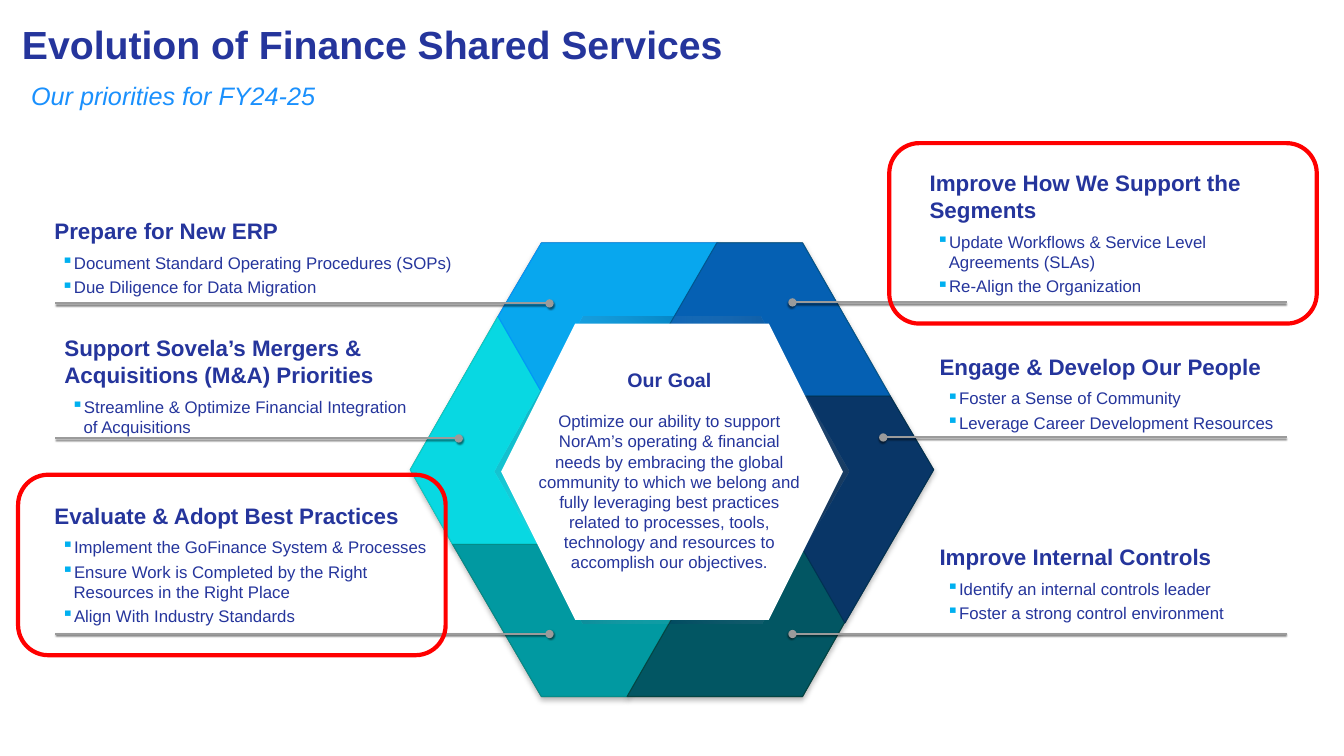
import pptx
import pptx.util
import pptx.dml.color
import pptx.enum.shapes
import pptx.enum.text
import pptx.oxml.ns
import pptx.oxml.xmlchemy
from dataclasses import dataclass

Inches = pptx.util.Inches
Pt = pptx.util.Pt
RGB = pptx.dml.color.RGBColor.from_string
SHAPE = pptx.enum.shapes.MSO_SHAPE
ANCHOR = pptx.enum.text.MSO_ANCHOR
ALIGN = pptx.enum.text.PP_ALIGN
qn = pptx.oxml.ns.qn


@dataclass(frozen=True)
class Theme:
    """Colours, font and type sizes of the slide."""
    font: str = "Arial"
    text: str = "25359C"
    subtitle: str = "1A90FD"
    bullet: str = "00B0F0"
    leader: str = "9B9B9B"
    frame: str = "FF0000"
    white: str = "FFFFFF"
    base: str = "777777"
    base_line: str = "606060"
    title_size: int = 28
    subtitle_size: int = 18
    heading_size: int = 16
    goal_size: int = 14
    body_size: int = 12


THEME = Theme()

SEGMENTS = [
    ("08D8E2", "06CEC9",
     [(5.36, 3.87), (4.94, 3.14), (4.07, 4.66), (4.49, 5.4), (6.24, 5.4)],
     [(5.36, 3.87), (4.91, 4.67), (5.33, 5.4), (6.25, 5.4)], "01315D", 28, 45),
    ("0199A1", "048C89",
     [(7.09, 5.4), (4.49, 5.4), (5.37, 6.91), (6.22, 6.91), (6.63, 6.19)],
     [(5.33, 5.4), (5.78, 6.19), (6.63, 6.19), (7.09, 5.4)], "01315D", 28, 0),
    ("08A7EE", "0195F9",
     [(5.37, 2.41), (4.94, 3.14), (5.36, 3.87), (5.82, 4.66), (6.24, 3.93), (7.12, 2.41)],
     [(5.82, 4.67), (6.24, 3.93), (6.7, 3.14), (5.78, 3.14), (5.36, 3.88)], "01315D", 28, 135),
    ("025663", "034543",
     [(7.97, 5.46), (7.51, 4.67), (7.09, 5.4), (6.22, 6.91), (7.96, 6.91), (8.38, 6.17)],
     [(7.09, 5.4), (6.63, 6.19), (7.55, 6.19), (7.97, 5.46), (7.51, 4.67)], "01315D", 28, 315),
    ("0560B3", "01568F",
     [(7.96, 2.41), (7.11, 2.41), (6.23, 3.93), (8.83, 3.93)],
     [(6.24, 3.93), (7.99, 3.93), (7.54, 3.14), (6.69, 3.14)], "01315D", 28, 180),
    ("093667", "013253",
     [(8.83, 3.93), (7.09, 3.93), (8.38, 6.18), (9.26, 4.66)],
     [(7.96, 5.45), (8.42, 4.67), (7.99, 3.92), (7.08, 3.92)], "000C16", 35, 225),
]

LEADERS = [
    (5.45, 0.55, 3.01), (4.55, 0.55, 4.35), (5.45, 0.55, 6.29),
    (7.86, 12.76, 3.0), (8.76, 12.76, 4.34), (7.86, 12.76, 6.29),
]

PRIORITIES = [
    ((9.22, 1.67, 3.5, 1.27), True, "Improve How We Support the Segments",
     ["Update Workflows & Service Level Agreements (SLAs)", "Re-Align the Organization"]),
    ((0.54, 4.96, 3.72, 1.25), True, "Evaluate & Adopt Best Practices",
     ["Implement the GoFinance System & Processes",
      "Ensure Work is Completed by the Right Resources in the Right Place",
      "Align With Industry Standards"]),
    ((0.54, 2.15, 4.24, 0.8), True, "Prepare for New ERP",
     ["Document Standard Operating Procedures (SOPs)", "Due Diligence for Data Migration"]),
    ((9.22, 5.34, 3.82, 0.9), False, "Improve Internal Controls",
     ["Identify an internal controls leader", "Foster a strong control environment"]),
    ((9.22, 3.45, 3.84, 0.9), False, "Engage & Develop Our People",
     ["Foster a Sense of Community", "Leverage Career Development Resources"]),
    ((0.54, 3.27, 3.72, 1.13), False, "Support Sovela’s Mergers & Acquisitions (M&A) Priorities",
     ["Streamline & Optimize Financial Integration of Acquisitions"]),
]

GOAL = ("Optimize our ability to support NorAm’s operating & financial needs by embracing "
        "the global community to which we belong and fully leveraging best practices related "
        "to processes, tools, technology and resources to accomplish our objectives.")


def add_xml(parent, tag, **attrs):
    """Append a drawing element and return it."""
    el = pptx.oxml.xmlchemy.OxmlElement(tag)
    for name, value in attrs.items():
        el.set(name, str(value))
    parent.append(el)
    return el


def add_shadow(effects, blur, dist, alpha):
    """Put a black shadow that falls downwards into an effect list."""
    outer = add_xml(effects, "a:outerShdw", blurRad=int(Pt(blur)), dist=int(Pt(dist)),
                    dir=5400000, algn="t", rotWithShape=0)
    add_xml(add_xml(outer, "a:srgbClr", val="000000"), "a:alpha", val=alpha * 1000)


def paint(sp, fill, line, width):
    """Set a plain fill and line, either of which may be None."""
    sp.shadow.inherit = False
    if fill:
        sp.fill.solid()
        sp.fill.fore_color.rgb = RGB(fill)
    else:
        sp.fill.background()
    if line:
        sp.line.color.rgb = RGB(line)
        sp.line.width = Pt(width)
    else:
        sp.line.fill.background()


def add_polygon(s, points, fill=None, line=None):
    """Add a closed outline through points given in inches."""
    start, *rest = [(Inches(x), Inches(y)) for x, y in points]
    builder = s.shapes.build_freeform(*start)
    builder.add_line_segments(rest, close=True)
    sp = builder.convert_to_shape()
    paint(sp, fill, line, 0.75)
    return sp


def add_shade(s, points, color, alpha, angle):
    """Add an inner face that fades from a dark tint to clear."""
    sp = add_polygon(s, points)
    sp.fill.gradient()
    sp.fill.gradient_angle = -angle % 360
    stops = sp.fill.gradient_stops
    for stop, rgb in zip(stops, (color, THEME.white)):
        stop.color.rgb = RGB(rgb)
    for el, opacity in zip(sp._element.iter(qn("a:gs")), (alpha, 0)):
        add_xml(el[0], "a:alpha", val=opacity * 1000)


def add_preset(s, kind, box, fill=None, line=None):
    """Add a preset shape."""
    sp = s.shapes.add_shape(kind, *map(Inches, box))
    paint(sp, fill, line, 3)


def add_leader(s, dot_x, end_x, y):
    """Add a horizontal line that starts with a dot."""
    cx = s.shapes.add_connector(pptx.enum.shapes.MSO_CONNECTOR.STRAIGHT,
                                Inches(dot_x), Inches(y), Inches(end_x), Inches(y))
    cx.line.color.rgb = RGB(THEME.leader)
    cx.line.width = Pt(1.5)
    spPr = cx._element.spPr
    add_xml(spPr.find(qn("a:ln")), "a:headEnd", type="oval")
    add_shadow(add_xml(spPr, "a:effectLst"), 1, 1, 50)


def add_box(s, box, anchor=ANCHOR.TOP, inset=True, grow=True):
    """Add a wrapping text box and return its text frame."""
    tf = s.shapes.add_textbox(*map(Inches, box)).text_frame
    tf.word_wrap = True
    tf.vertical_anchor = anchor
    if grow:
        tf.auto_size = pptx.enum.text.MSO_AUTO_SIZE.SHAPE_TO_FIT_TEXT
    if not inset:
        tf.margin_left = tf.margin_right = tf.margin_top = tf.margin_bottom = 0
    return tf


def write(p, text, size, color=THEME.text, bold=False, italic=False, after=0):
    """Write a paragraph and format its run."""
    p.text = text
    p.space_after = Pt(after)
    font = p.runs[0].font
    font.name, font.size, font.bold, font.italic = THEME.font, Pt(size), bold, italic
    font.color.rgb = RGB(color)


def add_priority(s, box, at_bottom, heading, items):
    """Add a heading with its bulleted items."""
    tf = add_box(s, box, ANCHOR.BOTTOM if at_bottom else ANCHOR.TOP, inset=not at_bottom)
    write(tf.paragraphs[0], heading, THEME.heading_size, bold=True, after=6)
    for item in items:
        p = tf.add_paragraph()
        write(p, item, THEME.body_size, after=3)
        pPr = p._p.get_or_add_pPr()
        pPr.set("marL", str(int(Inches(0.19))))
        pPr.set("indent", str(int(Inches(-0.12))))
        add_xml(add_xml(pPr, "a:buClr"), "a:srgbClr", val=THEME.bullet)
        add_xml(pPr, "a:buChar", char="▪")


def add_ring(s):
    """Add the six-part ring with its shadow and white centre."""
    for _, _, outline, *_ in SEGMENTS:
        sp = add_polygon(s, outline, THEME.base, THEME.base_line)
        add_shadow(sp._element.spPr.find(qn("a:effectLst")), 4, 2, 27)
    for fill, line, outline, *shade in SEGMENTS:
        add_polygon(s, outline, fill, line)
        add_shade(s, *shade)
    add_preset(s, SHAPE.HEXAGON, (4.97, 3.21, 3.39, 2.94), fill=THEME.white)


def add_goal(s):
    """Add the centred goal statement."""
    tf = add_box(s, (5.2, 3.6, 2.88, 2.15))
    write(tf.paragraphs[0], "Our Goal", THEME.goal_size, bold=True, after=14)
    write(tf.add_paragraph(), GOAL, THEME.body_size)
    for p in tf.paragraphs:
        p.alignment = ALIGN.CENTER


def main():
    """Build the slide and save it."""
    prs = pptx.Presentation()
    prs.slide_width, prs.slide_height = Inches(13.33), Inches(7.5)
    s = prs.slides.add_slide(prs.slide_layouts[6])
    add_ring(s)
    for leader in LEADERS:
        add_leader(s, *leader)
    add_goal(s)
    title = add_box(s, (0.12, 0.11, 12.67, 0.61), ANCHOR.BOTTOM, grow=False).paragraphs[0]
    title.line_spacing = 0.9
    write(title, "Evolution of Finance Shared Services", THEME.title_size, bold=True)
    write(add_box(s, (0.21, 0.75, 4.68, 0.4)).paragraphs[0], "Our priorities for FY24-25",
          THEME.subtitle_size, THEME.subtitle, italic=True)
    for priority in PRIORITIES:
        add_priority(s, *priority)
    for x, y in ((8.82, 1.42), (0.18, 4.71)):
        add_preset(s, SHAPE.ROUNDED_RECTANGLE, (x, y, 4.24, 1.79), line=THEME.frame)
    prs.save("out.pptx")


if __name__ == "__main__":
    main()
